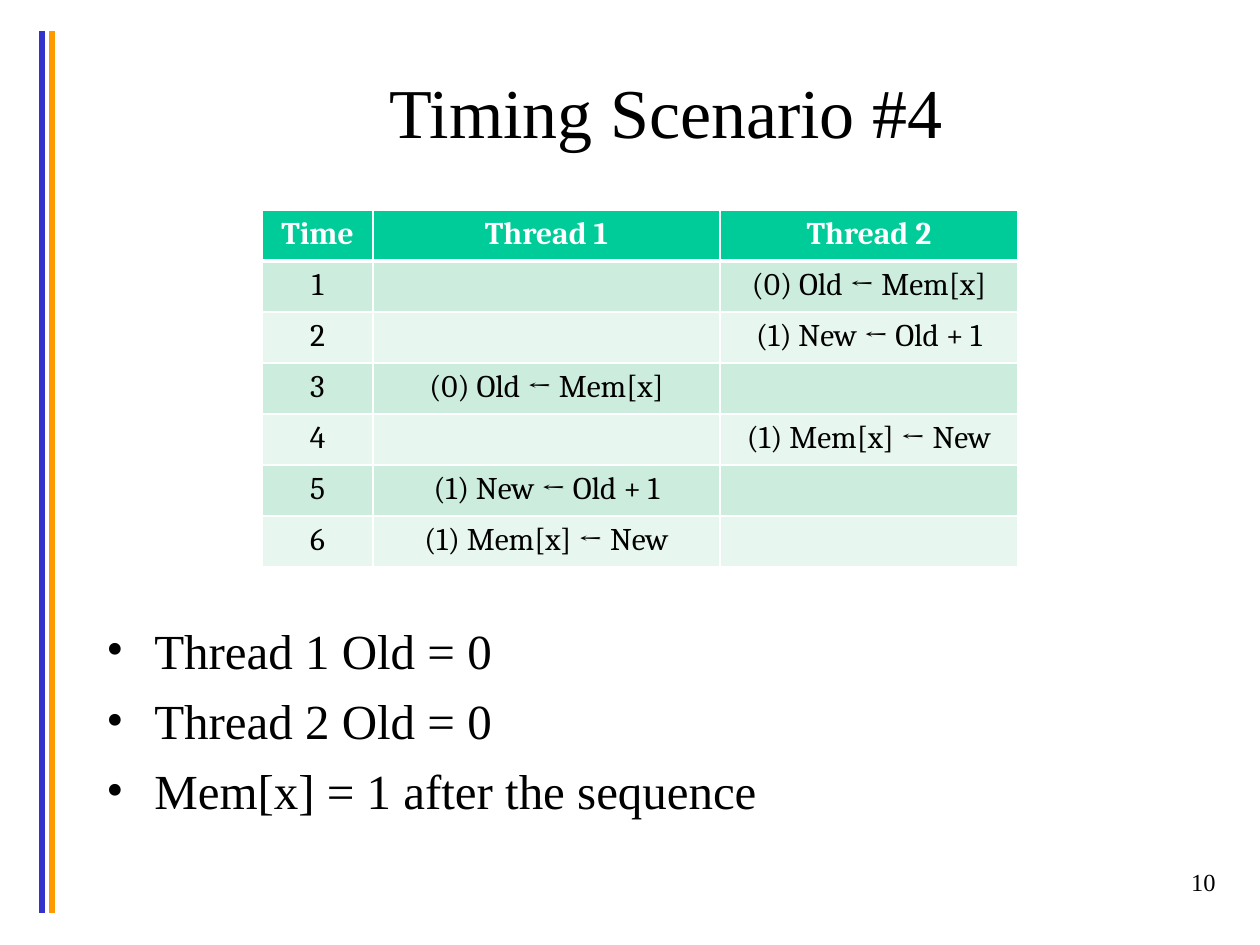
import pptx
import pptx.dml.color
import pptx.enum.shapes
import pptx.enum.text
import pptx.oxml.ns
import pptx.util
from lxml import etree

RGBColor = pptx.dml.color.RGBColor
ALIGN = pptx.enum.text.PP_ALIGN
ANCHOR = pptx.enum.text.MSO_ANCHOR
qn = pptx.oxml.ns.qn

BLACK = RGBColor(0x00, 0x00, 0x00)
WHITE = RGBColor(0xFF, 0xFF, 0xFF)
BLUE = RGBColor(0x33, 0x33, 0xCC)
ORANGE = RGBColor(0xFF, 0x99, 0x00)
HEADER_GREEN = RGBColor(0x00, 0xCC, 0x99)
BAND_DARK = RGBColor(0xCC, 0xEC, 0xDE)
BAND_LIGHT = RGBColor(0xE7, 0xF6, 0xEF)

PX_PER_INCH = 126
SLIDE_WIDTH, SLIDE_HEIGHT = 1260, 945


def px(length):
    return pptx.util.Emu(round(length * 914400 / PX_PER_INCH))


def write_text(paragraph, text, *, size, font, color=BLACK, bold=False, align=ALIGN.LEFT):
    paragraph.alignment = align
    run = paragraph.add_run()
    run.text = text
    run.font.size = pptx.util.Pt(size)
    run.font.name = font
    run.font.bold = bold
    run.font.color.rgb = color


class SlideBuilder:
    text_font = "Times New Roman"
    table_font = "Cambria"
    table_size = 18

    def __init__(self, slide):
        self.slide = slide

    def rule(self, x, top, bottom, color):
        line = self.slide.shapes.add_connector(
            pptx.enum.shapes.MSO_CONNECTOR.STRAIGHT, px(x), px(top), px(x), px(bottom))
        line.line.color.rgb = color
        line.line.width = pptx.util.Pt(3)
        etree.SubElement(line._element.spPr, qn("a:effectLst"))

    def text_frame(self, left, top, width, height, anchor=ANCHOR.TOP):
        box = self.slide.shapes.add_textbox(px(left), px(top), px(width), px(height))
        box.text_frame.word_wrap = True
        box.text_frame.vertical_anchor = anchor
        return box.text_frame

    def text(self, text, left, top, width, height, size, align, anchor=ANCHOR.TOP):
        frame = self.text_frame(left, top, width, height, anchor)
        write_text(frame.paragraphs[0], text, size=size, font=self.text_font, align=align)

    def bullets(self, items, left, top, width, height, size, indent, gap):
        frame = self.text_frame(left, top, width, height)
        for number, item in enumerate(items):
            paragraph = frame.add_paragraph() if number else frame.paragraphs[0]
            if number:
                paragraph.space_before = pptx.util.Pt(gap)
            properties = paragraph._p.get_or_add_pPr()
            properties.set("marL", str(px(indent)))
            properties.set("indent", str(-px(indent)))
            etree.SubElement(properties, qn("a:buFont"), typeface=self.text_font)
            etree.SubElement(properties, qn("a:buChar"), char="•")
            write_text(paragraph, item, size=size, font=self.text_font)

    def borders(self, cell, bottom_width):
        properties = cell._tc.get_or_add_tcPr()
        for side, width in (("L", 1), ("R", 1), ("T", 1), ("B", bottom_width)):
            border = etree.SubElement(properties, qn(f"a:ln{side}"),
                                      w=str(pptx.util.Pt(width)))
            fill = etree.SubElement(border, qn("a:solidFill"))
            etree.SubElement(fill, qn("a:srgbClr"), val=str(WHITE))

    def table(self, rows, left, top, column_widths, row_height):
        table = self.slide.shapes.add_table(
            len(rows), len(column_widths), px(left), px(top),
            px(sum(column_widths)), px(row_height * len(rows))).table
        table.horz_banding = False
        for column, width in zip(table.columns, column_widths):
            column.width = px(width)
        for r, row in enumerate(rows):
            header = r == 0
            band = BAND_DARK if r % 2 else BAND_LIGHT
            table.rows[r].height = px(row_height)
            for c, text in enumerate(row):
                cell = table.cell(r, c)
                self.borders(cell, 3 if header else 1)
                cell.fill.solid()
                cell.fill.fore_color.rgb = HEADER_GREEN if header else band
                if text:
                    write_text(cell.text_frame.paragraphs[0], text,
                               size=self.table_size, font=self.table_font, bold=header,
                               color=WHITE if header else BLACK, align=ALIGN.CENTER)


def main():
    deck = pptx.Presentation()
    deck.slide_width, deck.slide_height = px(SLIDE_WIDTH), px(SLIDE_HEIGHT)
    builder = SlideBuilder(deck.slides.add_slide(deck.slide_layouts[6]))

    # Vertical rules on the left edge
    for x, color in ((42, BLUE), (52, ORANGE)):
        builder.rule(x, 31, 913, color)

    # Title
    builder.text("Timing Scenario #4", 94, 32, 1144, 158, 40, ALIGN.CENTER, ANCHOR.MIDDLE)

    # Interleaving of the two threads
    load, add, store = "(0) Old ← Mem[x]", "(1) New ← Old + 1", "(1) Mem[x] ← New"
    schedule = [
        ("Time", "Thread 1", "Thread 2"),
        ("1", "", load),
        ("2", "", add),
        ("3", load, ""),
        ("4", "", store),
        ("5", add, ""),
        ("6", store, ""),
    ]
    builder.table(schedule, 262, 210, (111, 347, 298), 51)

    # Outcome
    outcome = ["Thread 1 Old = 0", "Thread 2 Old = 0", "Mem[x] = 1 after the sequence"]
    builder.bullets(outcome, 94, 614, 1144, 226, size=28, indent=48, gap=6.5)

    # Page number
    builder.text("10", 966, 861, 262, 63, 14, ALIGN.RIGHT)

    deck.save("out.pptx")


if __name__ == "__main__":
    main()
